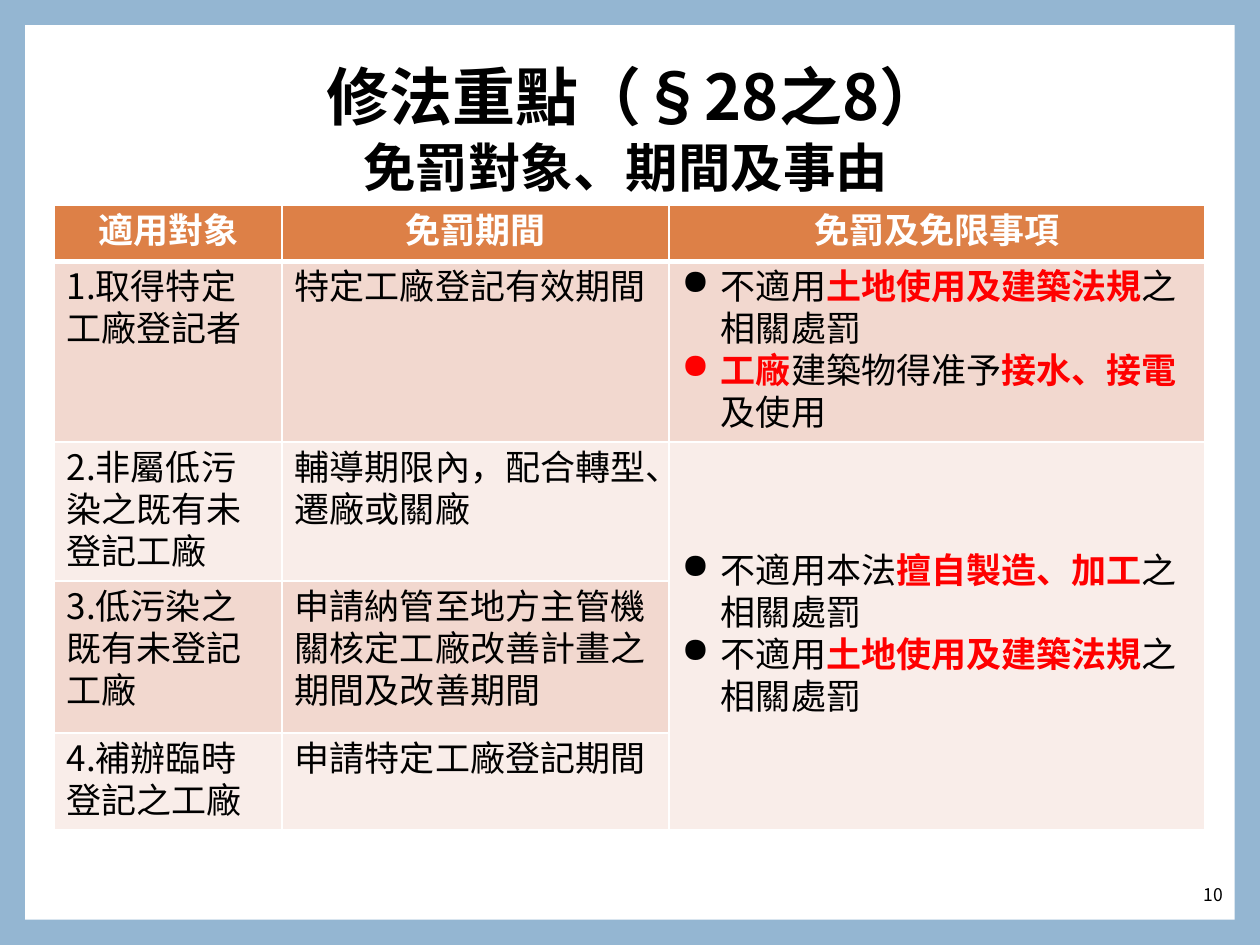
"""Build the slide on exemption subjects, periods and grounds under section 28-8."""
from dataclasses import dataclass

from lxml.etree import SubElement
from pptx import Presentation
from pptx.dml.color import RGBColor
from pptx.enum.shapes import MSO_SHAPE
from pptx.enum.text import MSO_ANCHOR, PP_ALIGN
from pptx.oxml.ns import qn
from pptx.util import Cm, Pt


@dataclass(frozen=True)
class Theme:
    font: str = "Noto Sans CJK TC"
    frame: str = "94B6D2"
    paper: str = "FFFFFF"
    ink: str = "000000"
    alert: str = "FF0000"
    header: str = "DD8047"
    bands: tuple[str, str] = ("F2D8CF", "F9EDE9")
    title_size: int = 36
    subtitle_size: int = 30
    table_size: int = 20
    number_size: int = 10
    table_leading: int = 24


@dataclass(frozen=True)
class Span:
    text: str
    key: bool = False


@dataclass(frozen=True)
class Heading:
    text: str
    box: tuple[float, float, float, float]
    size: int
    anchor: MSO_ANCHOR
    align: PP_ALIGN = PP_ALIGN.CENTER
    bold: bool = True
    spacing: float = 1.2


@dataclass(frozen=True)
class Rule:
    subject: str
    period: str
    height: float
    exemptions: tuple[tuple[Span, ...], ...] = ()


THEME = Theme()
LAND_RULE = (Span("不適用"), Span("土地使用及建築法規", True), Span("之相關處罰"))
HEADERS = ("適用對象", "免罰期間", "免罰及免限事項")
COLUMN_WIDTHS = (4.6, 7.8, 10.8)
HEADER_HEIGHT = 1.14
RULES = (
    Rule("1.取得特定工廠登記者", "特定工廠登記有效期間", 3.63, (
        LAND_RULE,
        (Span("工廠", True), Span("建築物得准予"), Span("接水、接電", True), Span("及使用")),
    )),
    Rule("2.非屬低污染之既有未登記工廠", "輔導期限內，配合轉型、遷廠或關廠", 2.79, (
        (Span("不適用本法"), Span("擅自製造、加工", True), Span("之相關處罰")),
        LAND_RULE,
    )),
    Rule("3.低污染之既有未登記工廠",
         "申請納管至地方主管機關核定工廠改善計畫之期間及改善期間", 3.07),
    Rule("4.補辦臨時登記之工廠", "申請特定工廠登記期間", 1.95),
)
TITLES = (
    Heading("修法重點（§28之8）", (1.88, 0.43, 21.82, 2.69),
            THEME.title_size, MSO_ANCHOR.MIDDLE),
    Heading("免罰對象、期間及事由", (1.5, 2.34, 22.23, 1.68),
            THEME.subtitle_size, MSO_ANCHOR.TOP),
)
PAGE_NUMBER = Heading("10", (21.34, 17.53, 3.56, 1.02), THEME.number_size,
                      MSO_ANCHOR.MIDDLE, PP_ALIGN.RIGHT, False, 1.0)


def add_run(paragraph, text: str, size: int, color: str, bold: bool) -> None:
    run = paragraph.add_run()
    run.text = text
    run.font.size = Pt(size)
    run.font.bold = bold
    run.font.color.rgb = RGBColor.from_string(color)
    run.font.name = THEME.font
    SubElement(run.font._element, qn("a:ea"), typeface=THEME.font)


def add_heading(shapes, heading: Heading) -> None:
    frame = shapes.add_textbox(*map(Cm, heading.box)).text_frame
    frame.word_wrap = True
    frame.vertical_anchor = heading.anchor
    paragraph = frame.paragraphs[0]
    paragraph.alignment = heading.align
    paragraph.line_spacing = heading.spacing
    add_run(paragraph, heading.text, heading.size, THEME.ink, heading.bold)


def style_cell(cell, fill: str, bottom: int = 1, top: int = 1) -> None:
    properties = cell._tc.get_or_add_tcPr()
    for side, width in (("L", 1), ("R", 1), ("T", top), ("B", bottom)):
        line = SubElement(properties, qn(f"a:ln{side}"), w=str(Pt(width)))
        solid = SubElement(line, qn("a:solidFill"))
        SubElement(solid, qn("a:srgbClr"), val=THEME.paper)
    cell.fill.solid()
    cell.fill.fore_color.rgb = RGBColor.from_string(fill)


def write_line(paragraph, spans: tuple[Span, ...], color: str = THEME.ink,
               bold: bool = False) -> None:
    paragraph.line_spacing = Pt(THEME.table_leading)
    for span in spans:
        add_run(paragraph, span.text, THEME.table_size,
                THEME.alert if span.key else color, bold or span.key)


def write_bullets(cell, items: tuple[tuple[Span, ...], ...]) -> None:
    frame = cell.text_frame
    for index, spans in enumerate(items):
        paragraph = frame.paragraphs[0] if index == 0 else frame.add_paragraph()
        properties = paragraph._p.get_or_add_pPr()
        properties.set("marL", str(Cm(0.79)))
        properties.set("indent", str(-Cm(0.79)))
        SubElement(properties, qn("a:buChar"), char="●")
        write_line(paragraph, spans)


def add_rules_table(shapes) -> None:
    heights = (HEADER_HEIGHT, *(rule.height for rule in RULES))
    table = shapes.add_table(len(heights), len(HEADERS), Cm(1.09), Cm(4.13),
                             Cm(sum(COLUMN_WIDTHS)), Cm(sum(heights))).table
    for column, width in zip(table.columns, COLUMN_WIDTHS):
        column.width = Cm(width)
    for row, height in zip(table.rows, heights):
        row.height = Cm(height)
    for index, label in enumerate(HEADERS):
        header = table.cell(0, index)
        style_cell(header, THEME.header, bottom=3)
        header.text_frame.paragraphs[0].alignment = PP_ALIGN.CENTER
        write_line(header.text_frame.paragraphs[0], (Span(label),), THEME.paper, True)
    for number, rule in enumerate(RULES, start=1):
        for column in range(len(HEADERS)):
            style_cell(table.cell(number, column), THEME.bands[(number - 1) % 2],
                       top=3 if number == 1 else 1)
        for column, text in enumerate((rule.subject, rule.period)):
            write_line(table.cell(number, column).text_frame.paragraphs[0], (Span(text),))
        write_bullets(table.cell(number, 2), rule.exemptions)
    shared = table.cell(2, 2)
    shared.merge(table.cell(len(RULES), 2))
    shared.vertical_anchor = MSO_ANCHOR.MIDDLE


def main() -> None:
    deck = Presentation()
    deck.slide_width, deck.slide_height = Cm(25.4), Cm(19.05)
    slide = deck.slides.add_slide(deck.slide_layouts[6])
    slide.background.fill.solid()
    slide.background.fill.fore_color.rgb = RGBColor.from_string(THEME.frame)
    paper = slide.shapes.add_shape(MSO_SHAPE.RECTANGLE, Cm(0.51), Cm(0.51),
                                   Cm(24.38), Cm(18.03))
    paper.shadow.inherit = False
    paper.fill.solid()
    paper.fill.fore_color.rgb = RGBColor.from_string(THEME.paper)
    paper.line.fill.background()
    add_heading(slide.shapes, PAGE_NUMBER)
    title_group = slide.shapes.add_group_shape()
    for title in TITLES:
        add_heading(title_group.shapes, title)
    add_rules_table(slide.shapes)
    deck.save("out.pptx")


if __name__ == "__main__":
    main()
